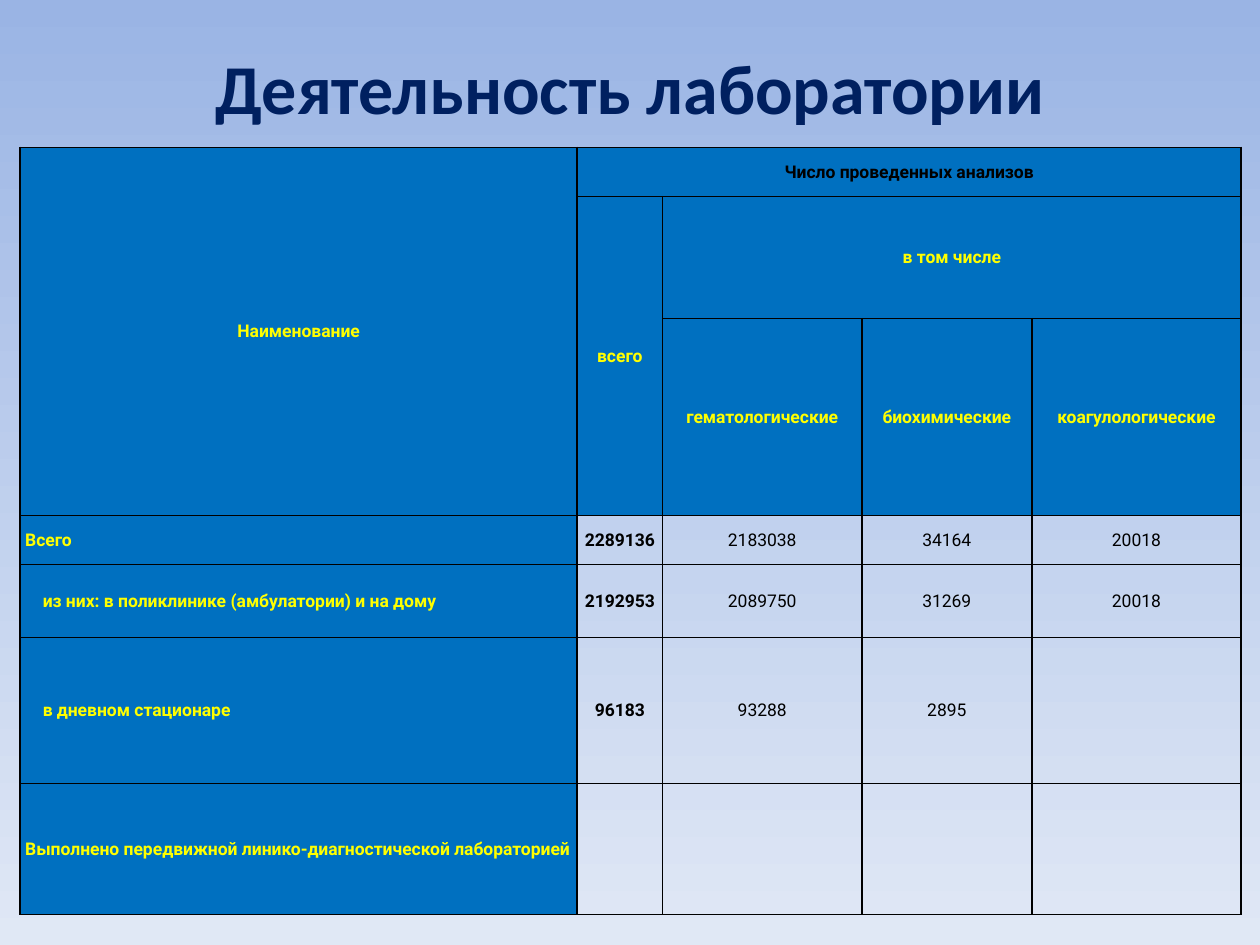
from lxml.etree import SubElement
from pptx import Presentation
from pptx.dml.color import RGBColor
from pptx.enum.text import MSO_ANCHOR, PP_ALIGN
from pptx.oxml.ns import qn
from pptx.util import Inches, Pt

NAVY = RGBColor(0x00, 0x20, 0x60)
BLUE = RGBColor(0x00, 0x70, 0xC0)
YELLOW = RGBColor(0xFF, 0xFF, 0x00)
BLACK = RGBColor(0x00, 0x00, 0x00)
SKY = RGBColor(0x9A, 0xB4, 0xE4)
PALE = RGBColor(0xE0, 0xE8, 0xF5)

COLUMN_WIDTHS = [4.42, 0.68, 1.58, 1.35, 1.66]
ROW_HEIGHTS = [0.39, 0.97, 1.56, 0.39, 0.58, 1.16, 1.04]
HEADER_ROWS = 3
ROWS = [
    ["Наименование", "Число проведенных анализов", "", "", ""],
    ["", "всего", "в том числе", "", ""],
    ["", "", "гематологические", "биохимические", "коагулологические"],
    ["Всего", "2289136", "2183038", "34164", "20018"],
    ["из них: в поликлинике (амбулатории) и на дому",
     "2192953", "2089750", "31269", "20018"],
    ["в дневном стационаре", "96183", "93288", "2895", ""],
    ["Выполнено передвижной линико-диагностической лабораторией",
     "", "", "", ""],
]
INDENTED_ROWS = (4, 5)
# First and last cell of each merged heading
MERGES = [((0, 0), (2, 0)), ((0, 1), (0, 4)), ((1, 1), (2, 1)), ((1, 2), (1, 4))]


def paint_background(page):
    fill = page.background.fill
    fill.gradient()
    fill.gradient_angle = 270
    for stop, position, color in zip(fill.gradient_stops, (0, 1), (SKY, PALE)):
        stop.position = position
        stop.color.rgb = color


def add_title(page, left, top, width, height):
    box = page.shapes.add_textbox(left, top, width, height)
    frame = box.text_frame
    frame.word_wrap = True
    frame.vertical_anchor = MSO_ANCHOR.MIDDLE
    para = frame.paragraphs[0]
    para.text = "Деятельность лаборатории"
    para.alignment = PP_ALIGN.CENTER
    style_font(para.font, "Calibri", 40, NAVY, True)


def style_font(font, name, size, color, bold):
    font.name = name
    font.size = Pt(size)
    font.color.rgb = color
    font.bold = bold


def add_borders(cell):
    properties = cell._tc.get_or_add_tcPr()
    for side in ("a:lnL", "a:lnR", "a:lnT", "a:lnB"):
        line = SubElement(properties, qn(side), w=str(Pt(1)))
        fill = SubElement(line, qn("a:solidFill"))
        SubElement(fill, qn("a:srgbClr"), val=str(BLACK))


def style_cell(cell, row, column):
    is_header = row < HEADER_ROWS
    is_label = column == 0 and not is_header
    # Frame and fill
    add_borders(cell)
    if is_header or is_label:
        cell.fill.solid()
        cell.fill.fore_color.rgb = BLUE
    else:
        cell.fill.background()
    # Text position
    cell.vertical_anchor = MSO_ANCHOR.MIDDLE
    cell.margin_left = cell.margin_right = cell.margin_top = Inches(0.01)
    cell.margin_bottom = 0
    if is_label:
        cell.margin_left = Inches(0.18 if row in INDENTED_ROWS else 0.04)
    # Text
    para = cell.text_frame.paragraphs[0]
    para.text = ROWS[row][column]
    para.alignment = PP_ALIGN.LEFT if is_label else PP_ALIGN.CENTER
    para.line_spacing = 0.93
    is_yellow = is_label or (is_header and (row, column) != (0, 1))
    style_font(para.font, "Roboto", 10, YELLOW if is_yellow else BLACK,
               is_header or column < 2)


def add_analysis_table(page, left, top, width, height):
    frame = page.shapes.add_table(len(ROWS), len(COLUMN_WIDTHS),
                                  left, top, width, height)
    table = frame.table
    table.first_row = table.horz_banding = False
    for column, size in zip(table.columns, COLUMN_WIDTHS):
        column.width = Inches(size)
    for row, size in zip(table.rows, ROW_HEIGHTS):
        row.height = Inches(size)
    for row in range(len(ROWS)):
        for column in range(len(COLUMN_WIDTHS)):
            style_cell(table.cell(row, column), row, column)
    for first, last in MERGES:
        table.cell(*first).merge(table.cell(*last))


def main():
    deck = Presentation()
    deck.slide_width, deck.slide_height = Inches(10), Inches(7.5)
    page = deck.slides.add_slide(deck.slide_layouts[6])
    paint_background(page)
    add_title(page, Inches(0.5), Inches(0.21), Inches(9), Inches(0.96))
    add_analysis_table(page, Inches(0.16), Inches(1.17), Inches(9.69), Inches(6.09))
    deck.save("out.pptx")


if __name__ == "__main__":
    main()
